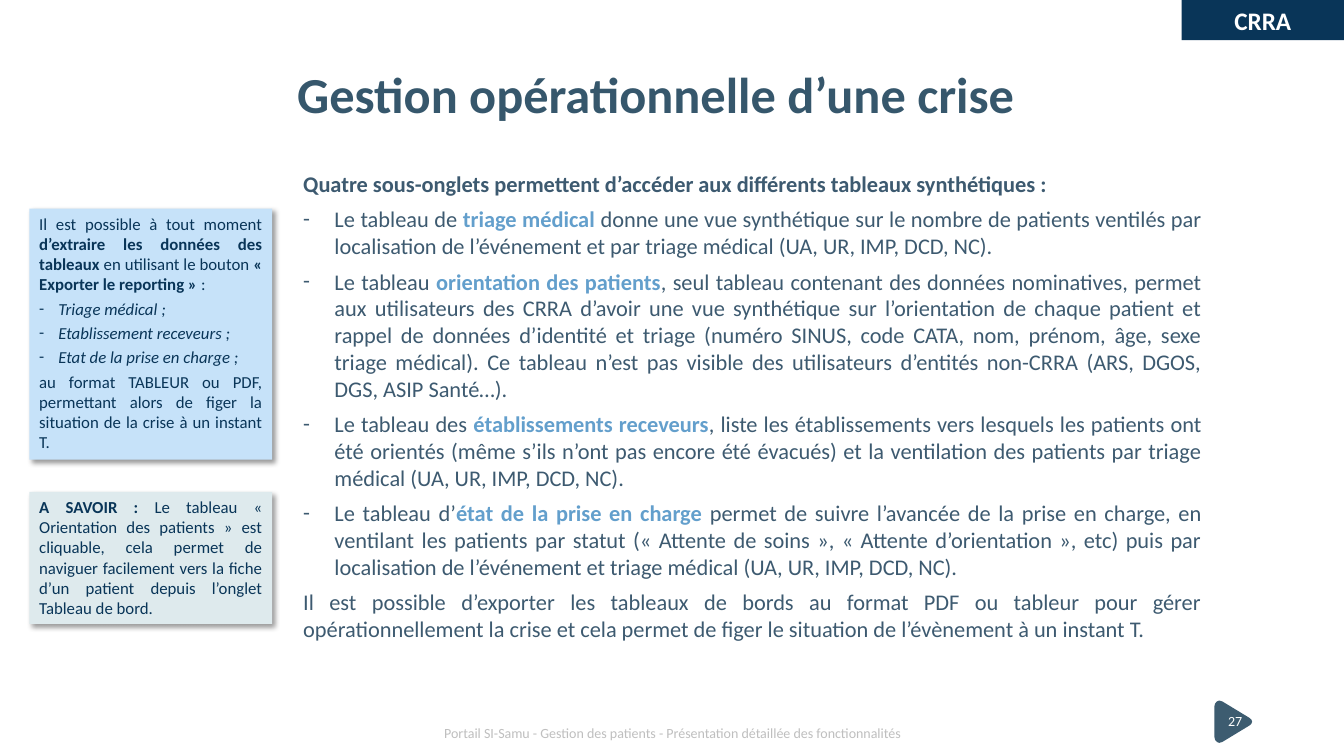
from dataclasses import dataclass

from lxml import etree
from pptx import Presentation
from pptx.dml.color import RGBColor
from pptx.enum.shapes import MSO_SHAPE
from pptx.enum.text import MSO_ANCHOR, MSO_AUTO_SIZE, PP_ALIGN
from pptx.oxml.ns import qn
from pptx.util import Inches, Pt

RECTANGLE = MSO_SHAPE.RECTANGLE
TOP, MIDDLE = MSO_ANCHOR.TOP, MSO_ANCHOR.MIDDLE
FIT_SHAPE, NO_FIT = MSO_AUTO_SIZE.SHAPE_TO_FIT_TEXT, MSO_AUTO_SIZE.NONE
LEFT, CENTER, RIGHT, JUSTIFY = PP_ALIGN.LEFT, PP_ALIGN.CENTER, PP_ALIGN.RIGHT, PP_ALIGN.JUSTIFY

SLIDE_WIDTH, SLIDE_HEIGHT = Inches(13.33), Inches(7.5)


@dataclass(frozen=True)
class Theme:
    font: str = "Calibri"
    navy: str = "093558"
    title: str = "36576C"
    body: str = "3D5A70"
    accent: str = "639FCC"
    marker: str = "3D5C70"
    footer: str = "BFBFBF"
    white: str = "FFFFFF"
    export_note: str = "C6E2F9"
    tip_note: str = "DEEAED"
    title_size: int = 36
    tab_size: int = 18
    body_size: int = 16
    note_size: int = 12
    small_size: int = 10


THEME = Theme()


@dataclass(frozen=True)
class Box:
    """Place and size in EMU."""
    left: int
    top: int
    width: int
    height: int

    def values(self):
        return self.left, self.top, self.width, self.height


def share(left, top, width, height):
    """Box given in percent of the slide's width and height."""
    return Box(int(SLIDE_WIDTH * left / 100), int(SLIDE_HEIGHT * top / 100),
               int(SLIDE_WIDTH * width / 100), int(SLIDE_HEIGHT * height / 100))


# Run styles: plain text is a string, styled text a (text, style) pair
BOLD, ITALIC, KEY = "bold", "italic", "key"

BODY_TITLE = [("Quatre sous-onglets permettent d’accéder aux différents tableaux synthétiques :", BOLD)]
BODY_ITEMS = [
    ["Le tableau de ", ("triage médical ", KEY),
     "donne une vue synthétique sur le nombre de patients ventilés par localisation de "
     "l’événement et par triage médical (UA, UR, IMP, DCD, NC)."],
    ["Le tableau", (" orientation des patients", KEY),
     ", seul tableau contenant des données nominatives, permet aux utilisateurs des CRRA "
     "d’avoir une vue synthétique sur l’orientation de chaque patient et rappel de données "
     "d’identité et triage (numéro SINUS, code CATA, nom, prénom, âge, sexe triage médical). "
     "Ce tableau n’est pas visible des utilisateurs d’entités non-CRRA (ARS, DGOS, DGS, "
     "ASIP Santé…)."],
    ["Le tableau des ", ("établissements receveurs", KEY),
     ", liste les établissements vers lesquels les patients ont été orientés (même s’ils "
     "n’ont pas encore été évacués) et la ventilation des patients par triage médical "
     "(UA, UR, IMP, DCD, NC)."],
    ["Le tableau d’", ("état de la prise en charge ", KEY),
     "permet de suivre l’avancée de la prise en charge, en ventilant les patients par statut "
     "(« Attente de soins », « Attente d’orientation », etc) puis par localisation de "
     "l’événement et triage médical (UA, UR, IMP, DCD, NC)."],
]
BODY_END = ["Il est possible d’exporter les tableaux de bords au format PDF ou tableur pour gérer "
            "opérationnellement la crise et cela permet de figer le situation de l’évènement "
            "à un instant T."]

EXPORT_INTRO = ["Il est possible à tout moment ", ("d’extraire les données des tableaux ", BOLD),
                "en utilisant le bouton ", ("« Exporter le reporting » ", BOLD), ":"]
EXPORT_ITEMS = ["Triage médical ;", "Etablissement receveurs ;", "Etat de la prise en charge ;"]
EXPORT_END = ["au format TABLEUR ou PDF, permettant alors de figer la situation de la crise "
              "à un instant T."]
TIP = [("A SAVOIR : ", BOLD),
       "Le tableau « Orientation des patients » est cliquable, cela permet de naviguer "
       "facilement vers la fiche d’un patient depuis l’onglet Tableau de bord."]


def set_frame(shape, anchor=TOP, fit=NO_FIT):
    frame = shape.text_frame
    frame.word_wrap = True
    frame.vertical_anchor = anchor
    frame.auto_size = fit
    return frame


def write_paragraph(frame, runs, size, color, align=LEFT, after=0, margin=0, hanging=0):
    """Fill the empty first paragraph or add one; a hanging indent brings a dash."""
    first = frame.paragraphs[0]
    paragraph = first if not first.runs else frame.add_paragraph()
    paragraph.alignment = align
    paragraph.space_after = Pt(after)
    properties = paragraph._p.get_or_add_pPr()
    properties.set("marL", str(Inches(margin)))
    properties.set("indent", str(-Inches(hanging)))
    if hanging:
        etree.SubElement(properties, qn("a:buFont"), typeface=THEME.font)
        etree.SubElement(properties, qn("a:buChar"), char="-")
    for item in runs:
        text, style = (item, None) if isinstance(item, str) else item
        run = paragraph.add_run()
        run.text = text
        run.font.name = THEME.font
        run.font.size = Pt(size)
        run.font.bold = style in (BOLD, KEY)
        run.font.italic = style == ITALIC
        run.font.color.rgb = RGBColor.from_string(THEME.accent if style == KEY else color)
    return paragraph


def paint(shape, color):
    shape.shadow.inherit = False
    shape.fill.solid()
    shape.fill.fore_color.rgb = RGBColor.from_string(color)
    shape.line.fill.background()


def drop_shadow(shape):
    effects = shape._element.spPr.find(qn("a:effectLst"))
    shadow = etree.SubElement(effects, qn("a:outerShdw"), blurRad=str(Pt(4)), dist=str(Pt(3)),
                              dir="2700000", algn="tl", rotWithShape="0")
    tint = etree.SubElement(shadow, qn("a:srgbClr"), val="000000")
    etree.SubElement(tint, qn("a:alpha"), val="40000")


def add_page_marker(slide, box, number):
    # Rounded triangle at the right end of the box, mirrored about its middle
    width, height = box.width * 0.125, box.height * 1.05
    left = box.left + box.width - width
    upper = [(0.13, 0), (0.07, 0.02), (0.02, 0.07), (0, 0.14)]
    tip = [(0.93, 0.41), (0.98, 0.45), (1, 0.5), (0.98, 0.55), (0.93, 0.59)]
    lower = [(x, 1 - y) for x, y in upper]
    outline = [(0.21, 0.02)] + upper + lower[::-1] + [(0.21, 0.98)] + tip[::-1]
    points = [(int(left + x * width), int(box.top + y * height)) for x, y in outline]
    builder = slide.shapes.build_freeform(*points[0])
    builder.add_line_segments(points[1:], close=True)
    paint(builder.convert_to_shape(), THEME.marker)
    add_line(slide, box, number, THEME.small_size, THEME.white, RIGHT)


def add_line(slide, box, text, size, color, align=LEFT, style=None):
    """One line of text in the vertical middle of the box."""
    frame = set_frame(slide.shapes.add_textbox(*box.values()), MIDDLE)
    return write_paragraph(frame, [(text, style)], size, color, align)


def add_body(slide, box):
    frame = set_frame(slide.shapes.add_textbox(*box.values()), fit=FIT_SHAPE)
    style = dict(size=THEME.body_size, color=THEME.body, align=JUSTIFY, after=6)
    write_paragraph(frame, BODY_TITLE, margin=0.21, **style)
    for item in BODY_ITEMS:
        write_paragraph(frame, item, margin=0.52, hanging=0.31, **style)
    write_paragraph(frame, BODY_END, margin=0.21, **style)


def add_note(slide, box, color, intro, items=(), end=None):
    note = slide.shapes.add_shape(RECTANGLE, *box.values())
    paint(note, color)
    drop_shadow(note)
    frame = set_frame(note, fit=FIT_SHAPE)
    style = dict(size=THEME.note_size, color=THEME.navy, align=JUSTIFY, after=3)
    write_paragraph(frame, intro, **style)
    for item in items:
        write_paragraph(frame, [(item, ITALIC)], margin=0.19, hanging=0.19, **style)
    if end:
        write_paragraph(frame, end, **style)


def add_section_tab(slide, box, text):
    tab = slide.shapes.add_shape(RECTANGLE, *box.values())
    paint(tab, THEME.navy)
    frame = set_frame(tab, fit=FIT_SHAPE)
    write_paragraph(frame, [(text, BOLD)], THEME.tab_size, THEME.white, CENTER)


def main():
    presentation = Presentation()
    presentation.slide_width, presentation.slide_height = SLIDE_WIDTH, SLIDE_HEIGHT
    slide = presentation.slides.add_slide(presentation.slide_layouts[6])

    add_page_marker(slide, share(70.67, 92.67, 22.5, 5.33), "27")
    add_body(slide, share(20.25, 21.87, 69.92, 64.4))
    add_line(slide, share(28.73, 94.27, 42.61, 5.33),
             "Portail SI-Samu - Gestion des patients - Présentation détaillée des fonctionnalités",
             THEME.small_size, THEME.footer, CENTER)
    title = add_line(slide, share(21.38, 5.33, 73.14, 15.07), "Gestion opérationnelle d’une crise",
                     THEME.title_size, THEME.title, style=BOLD)
    title.line_spacing = 0.9
    add_note(slide, share(2.18, 27.6, 18.08, 33.2), THEME.export_note,
             EXPORT_INTRO, EXPORT_ITEMS, EXPORT_END)
    add_note(slide, share(2.18, 65.07, 18.08, 17.47), THEME.tip_note, TIP)
    add_section_tab(slide, share(87.92, 0, 12.08, 5.33), "CRRA")
    presentation.save("out.pptx")


if __name__ == "__main__":
    main()
